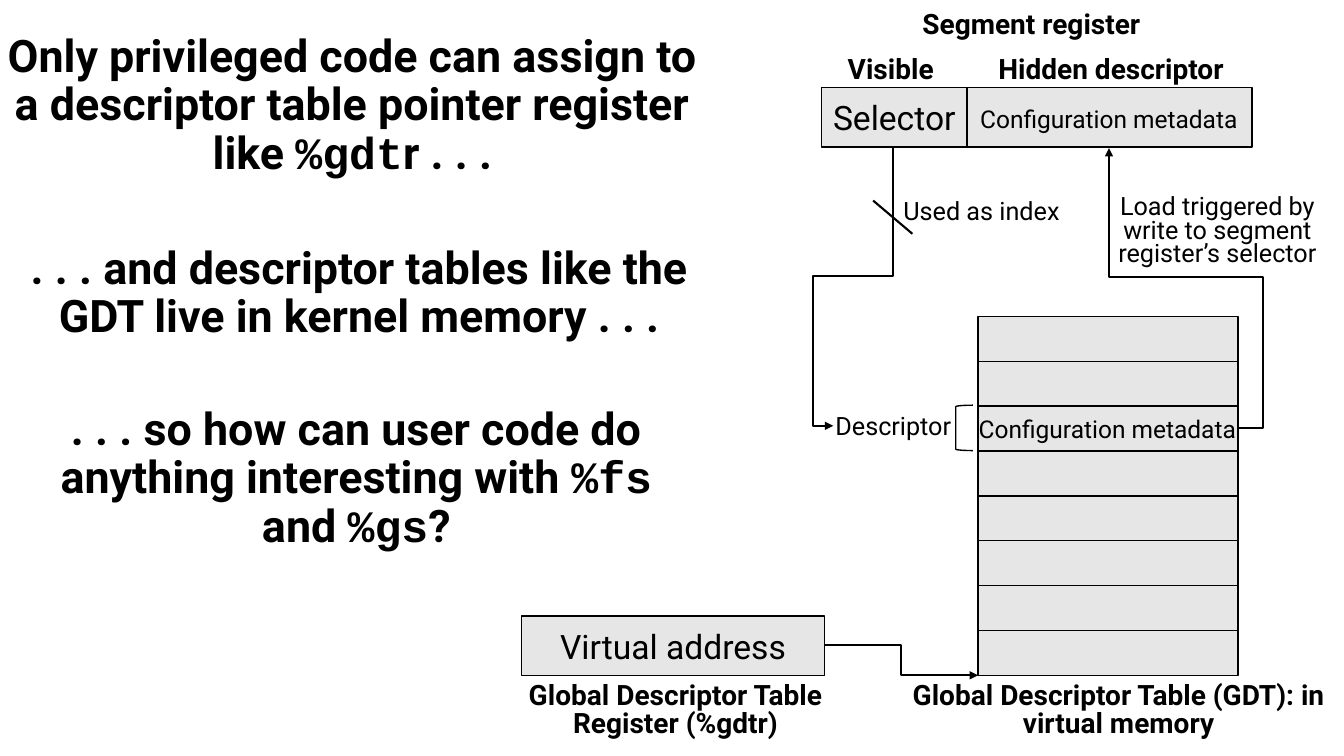
from lxml import etree
from pptx import Presentation
from pptx.dml.color import RGBColor
from pptx.enum.shapes import MSO_CONNECTOR, MSO_SHAPE
from pptx.enum.text import MSO_ANCHOR, PP_ALIGN
from pptx.oxml.ns import qn
from pptx.util import Inches, Pt

RECT, BRACKET = MSO_SHAPE.RECTANGLE, MSO_SHAPE.LEFT_BRACKET
STRAIGHT, ELBOW = MSO_CONNECTOR.STRAIGHT, MSO_CONNECTOR.ELBOW
TOP, MIDDLE, CENTER = MSO_ANCHOR.TOP, MSO_ANCHOR.MIDDLE, PP_ALIGN.CENTER
SANS, MONO = "Roboto", "Courier New"
BLACK, GRAY = "000000", "E7E6E6"
rgb = RGBColor.from_string

prs = Presentation()
prs.slide_width, prs.slide_height = Inches(13.33), Inches(7.5)
COL, ROW = prs.slide_width / 133.3, prs.slide_height / 75
s = prs.slides.add_slide(prs.slide_layouts[6])


def cells(x, y, w, h):
    return int(x * COL), int(y * ROW), int(w * COL), int(h * ROW)


def write(sp, runs, size, bold=False, spacing=None, anchor=TOP, wrap=True):
    tf = sp.text_frame
    tf.word_wrap, tf.vertical_anchor = wrap, anchor
    p = tf.paragraphs[0]
    p.alignment, p.line_spacing = CENTER, spacing
    p.font.size, p.font.bold, p.font.name = Pt(size), bold, SANS
    p.font.color.rgb = rgb(BLACK)
    for i, words in enumerate(runs):
        r = p.add_run()
        r.text = words
        if i % 2:
            r.font.name = MONO


GDT_LEFT, GDT_TOP, GDT_WIDTH, ENTRY, ENTRIES = 97, 31.4, 25.8, 4.45, 8
boxes = [(RECT, GDT_LEFT, GDT_TOP + i * ENTRY, GDT_WIDTH, ENTRY, "")
         for i in range(ENTRIES)]
boxes += [
    (RECT, 51.7, 61.1, 30.1, 5.9, "Virtual address"),
    (RECT, 95.8, 8.7, 28.4, 5.9, ""),
    (RECT, 81.5, 8.7, 14.4, 5.9, "Selector"),
    (BRACKET, 94.8, 40.2, 1.7, 4.5, ""),
]
for kind, x, y, w, h, label in boxes:
    sp = s.shapes.add_shape(kind, *cells(x, y, w, h))
    sp.shadow.inherit = False
    sp.line.color.rgb, sp.line.width = rgb(BLACK), Pt(1)
    if kind == BRACKET:
        sp.fill.background()
    else:
        sp.fill.solid()
        sp.fill.fore_color.rgb = rgb(GRAY)
    if label:
        write(sp, [label], 24, anchor=MIDDLE)

statements = [
    (-0.8, 1.3, 71.5, ["Only privileged code can assign to a descriptor table "
                       "pointer register like ", "%gdt", "r . . ."]),
    (-0.1, 19.9, 71.5, [". . . and descriptor tables like the GDT live in "
                        "kernel memory . . ."]),
    (4.7, 38.3, 61.3, [". . . so how can user code do anything interesting with ",
                       "%fs", " and ", "%gs", "?"]),
]
for x, y, w, runs in statements:
    sp = s.shapes.add_textbox(*cells(x, y, w, 18.5))
    write(sp, runs, 32, True, 0.9, MIDDLE)

headings = [
    (48.6, 67.3, 36.8, 6.6, "Global Descriptor Table Register (%gdtr)"),
    (88.6, 67.3, 44.7, 6.6, "Global Descriptor Table (GDT): in virtual memory"),
    (83.9, 0.7, 36.8, 3.8, "Segment register"),
    (81.1, 5.2, 14.5, 3.8, "Visible"),
    (94.7, 5.2, 31, 3.8, "Hidden descriptor"),
]
for x, y, w, h, label in headings:
    sp = s.shapes.add_textbox(*cells(x, y, w, h))
    write(sp, [label], 20, True, Pt(20))

notes = [
    (81.4, 40.2, 14.4, 4, "Descriptor", 18, None, True),
    (88.2, 18.9, 18.3, 4, "Used as index", 18, None, True),
    (108.6, 19, 24.3, 8.2,
     "Load triggered by write to segment register’s selector", 18, Pt(17), True),
    (95.6, 41.3, 28.5, 3.3, "Configuration metadata", 17.5, Pt(16), False),
    (96.1, 10.5, 27.8, 3.3, "Configuration metadata", 17.5, Pt(16), False),
]
for x, y, w, h, label, size, spacing, wrap in notes:
    sp = s.shapes.add_textbox(*cells(x, y, w, h))
    write(sp, [label], size, spacing=spacing, wrap=wrap)

connectors = [
    (STRAIGHT, 86.6, 19.9, 90.5, 23.2, 0, ()),
    (ELBOW, 81.8, 64, 97, 67, 0, ()),
    (ELBOW, 71.8, 25.5, 99.4, 31.4, 90, (46300, 134300)),
    (ELBOW, 122.8, 42.5, 110, 14.7, 0, (-19500, 54000)),
]
for kind, x1, y1, x2, y2, turn, bends in connectors:
    c = s.shapes.add_connector(kind, *cells(x1, y1, x2, y2))
    c.line.color.rgb, c.line.width = rgb(BLACK), Pt(1.5)
    spPr = c._element.spPr
    if kind == ELBOW:
        tail = etree.SubElement(c.line._get_or_add_ln(), qn("a:tailEnd"))
        tail.set("type", "triangle")
    if turn:
        spPr.find(qn("a:xfrm")).set("rot", str(turn * 60000))
    if bends:
        geom = spPr.find(qn("a:prstGeom"))
        geom.set("prst", "bentConnector4")
        for i, bend in enumerate(bends, 1):
            gd = etree.SubElement(geom.find(qn("a:avLst")), qn("a:gd"))
            gd.set("name", f"adj{i}")
            gd.set("fmla", f"val {bend}")
    etree.SubElement(spPr, qn("a:effectLst"))

prs.save("out.pptx")
